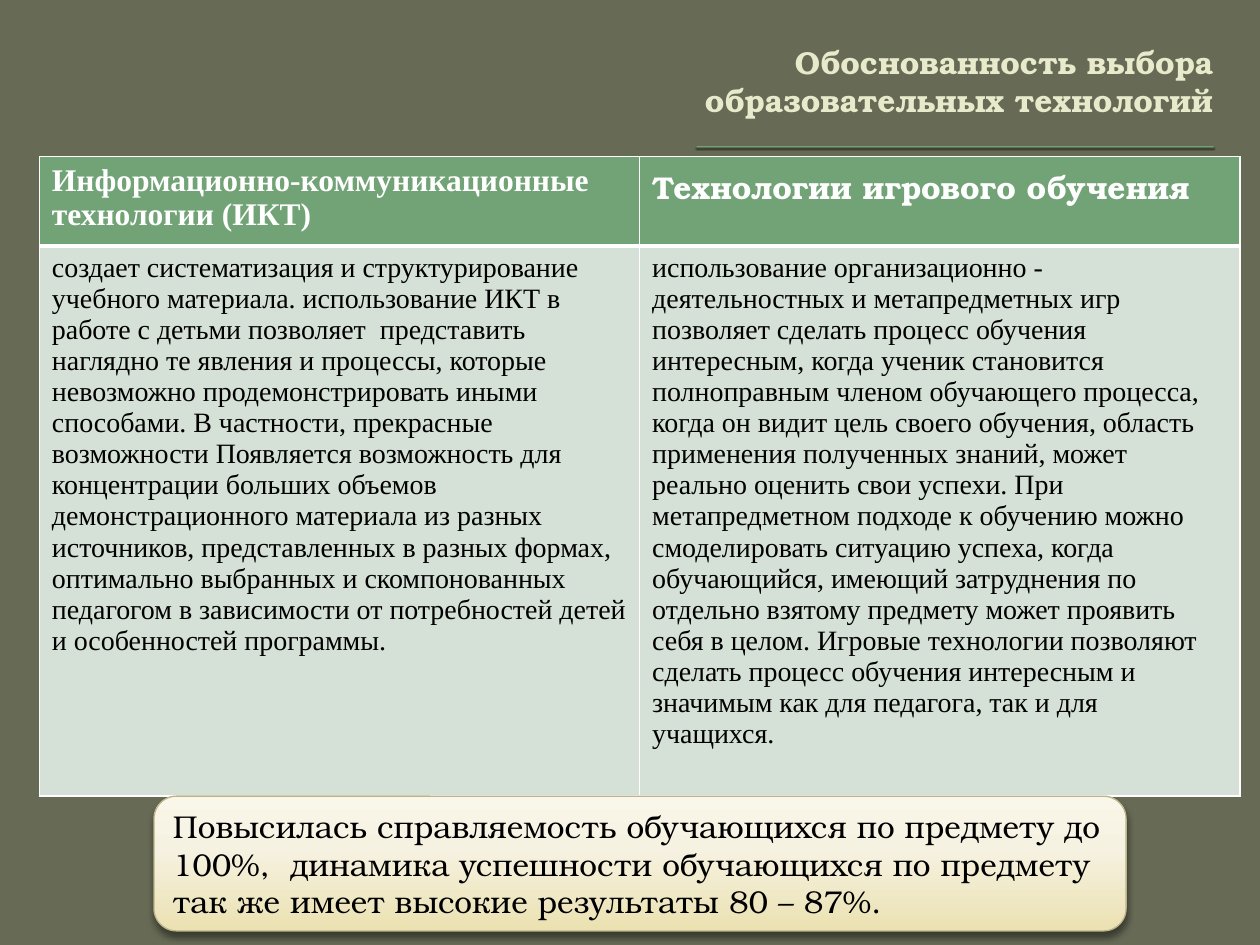
from dataclasses import dataclass

from pptx import Presentation
from pptx.dml.color import RGBColor
from pptx.enum.shapes import MSO_SHAPE
from pptx.enum.text import MSO_ANCHOR, PP_ALIGN
from pptx.oxml import parse_xml
from pptx.oxml.ns import nsdecls, qn
from pptx.util import Pt


@dataclass(frozen=True)
class Theme:
    """Colours, fonts and type sizes of the slide."""
    background: str = "676A55"
    title: str = "E7EACB"
    accent: str = "72A376"
    body_fill: str = "D5E0D6"
    light: str = "FFFFFF"
    dark: str = "000000"
    callout_line: str = "BBB389"
    callout_stops: tuple = ((0, "EBE1B1"), (62, "F6F2E2"), (100, "F9F6EA"))
    display_font: str = "TeX Gyre Bonum"
    text_font: str = "Times New Roman"
    large: int = 18
    small: int = 16


THEME = Theme()

TITLE = "Обоснованность выбора образовательных технологий"
HEADERS = (
    ("Информационно-коммуникационные технологии (ИКТ) ", THEME.text_font),
    ("Технологии игрового обучения", THEME.display_font),
)
BODIES = (
    "создает систематизация и структурирование учебного материала. использование ИКТ в работе "
    "с детьми позволяет  представить наглядно те явления и процессы, которые невозможно "
    "продемонстрировать иными способами. В частности, прекрасные возможности Появляется "
    "возможность для концентрации больших объемов демонстрационного материала из разных "
    "источников, представленных в разных формах, оптимально выбранных и скомпонованных "
    "педагогом в зависимости от потребностей детей и особенностей программы.",
    "использование организационно - деятельностных и метапредметных игр позволяет сделать "
    "процесс обучения  интересным, когда ученик становится полноправным членом обучающего "
    "процесса, когда он видит цель своего обучения, область применения полученных знаний, может "
    "реально оценить свои успехи. При метапредметном подходе к обучению можно смоделировать "
    "ситуацию успеха, когда обучающийся, имеющий затруднения по отдельно взятому предмету может "
    "проявить себя в целом. Игровые технологии позволяют сделать процесс обучения интересным и "
    "значимым как для педагога, так и для учащихся.",
)
CALLOUT = (
    "Повысилась справляемость обучающихся по предмету до 100%,  динамика успешности "
    "обучающихся по предмету так же имеет высокие результаты 80 – 87%."
)


def paint(fill, color):
    """Make a fill solid in the given colour."""
    fill.solid()
    fill.fore_color.rgb = RGBColor.from_string(color)


def write(text_frame, text, font, size, color, bold=False, align=PP_ALIGN.LEFT):
    """Write one styled run into the first paragraph of a text frame."""
    text_frame.word_wrap = True
    paragraph = text_frame.paragraphs[0]
    paragraph.alignment = align
    run = paragraph.add_run()
    run.text = text
    run.font.name = font
    run.font.size = Pt(size)
    run.font.bold = bold
    run.font.color.rgb = RGBColor.from_string(color)


def add_shadow(shape, opacity, blur, distance):
    """Give a shape a black shadow that falls straight down."""
    shape.shadow.inherit = False
    shape.element.spPr.find(qn("a:effectLst")).append(parse_xml(
        f'<a:outerShdw {nsdecls("a")} blurRad="{Pt(blur)}" dist="{Pt(distance)}" '
        f'dir="5400000" rotWithShape="0"><a:srgbClr val="{THEME.dark}">'
        f'<a:alpha val="{opacity * 1000}"/></a:srgbClr></a:outerShdw>'))


def add_title(slide):
    """Add the right-aligned title and the rule below it."""
    box = slide.shapes.add_textbox(Pt(391), Pt(24), Pt(309.5), Pt(47.5))
    box.text_frame.vertical_anchor = MSO_ANCHOR.BOTTOM
    write(box.text_frame, TITLE, THEME.display_font, THEME.large, THEME.title,
          bold=True, align=PP_ALIGN.RIGHT)
    rule = slide.shapes.add_shape(MSO_SHAPE.RECTANGLE, Pt(398), Pt(83.5), Pt(295.5), Pt(0.72))
    paint(rule.fill, THEME.accent)
    rule.line.fill.background()
    add_shadow(rule, 75, 1, 1)


def style_cell(cell, fill, border_widths):
    """Fill a cell and draw its white left, right, top and bottom borders."""
    paint(cell.fill, fill)
    properties = cell._tc.get_or_add_tcPr()
    for index, (side, width) in enumerate(zip("LRTB", border_widths)):
        properties.insert(index, parse_xml(
            f'<a:ln{side} {nsdecls("a")} w="{Pt(width)}"><a:solidFill>'
            f'<a:srgbClr val="{THEME.light}"/></a:solidFill></a:ln{side}>'))


def add_comparison(slide):
    """Add the table that sets the two technologies side by side."""
    frame = slide.shapes.add_table(2, len(HEADERS), Pt(22.5), Pt(89.5), Pt(686), Pt(342.5))
    table = frame.table
    table.horz_banding = False
    table.rows[0].height = Pt(51)
    table.rows[1].height = Pt(291.5)
    for column, ((header, font), body) in enumerate(zip(HEADERS, BODIES)):
        header_cell, body_cell = table.cell(0, column), table.cell(1, column)
        style_cell(header_cell, THEME.accent, (1, 1, 1, 3))
        write(header_cell.text_frame, header, font, THEME.large, THEME.light, bold=True)
        style_cell(body_cell, THEME.body_fill, (1, 1, 3, 1))
        write(body_cell.text_frame, body, THEME.text_font, THEME.small, THEME.dark)


def add_callout(slide):
    """Add the rounded box with the results."""
    shape = slide.shapes.add_shape(
        MSO_SHAPE.ROUNDED_RECTANGLE, Pt(88), Pt(455), Pt(555.5), Pt(77))
    shape.fill.gradient()
    shape.fill.gradient_angle = 90
    stops = shape.element.spPr.find(qn("a:gradFill")).find(qn("a:gsLst"))
    for stop in list(stops):
        stops.remove(stop)
    for position, color in THEME.callout_stops:
        stops.append(parse_xml(
            f'<a:gs {nsdecls("a")} pos="{position * 1000}"><a:srgbClr val="{color}"/></a:gs>'))
    shape.line.color.rgb = RGBColor.from_string(THEME.callout_line)
    shape.line.width = Pt(0.75)
    add_shadow(shape, 43, 4, 3)
    shape.text_frame.vertical_anchor = MSO_ANCHOR.MIDDLE
    write(shape.text_frame, CALLOUT, THEME.display_font, THEME.large, THEME.dark)


def main():
    """Build the slide and save it."""
    presentation = Presentation()
    presentation.slide_width, presentation.slide_height = Pt(720), Pt(540)
    slide = presentation.slides.add_slide(presentation.slide_layouts[6])
    paint(slide.background.fill, THEME.background)
    add_title(slide)
    add_comparison(slide)
    add_callout(slide)
    presentation.save("out.pptx")


if __name__ == "__main__":
    main()
